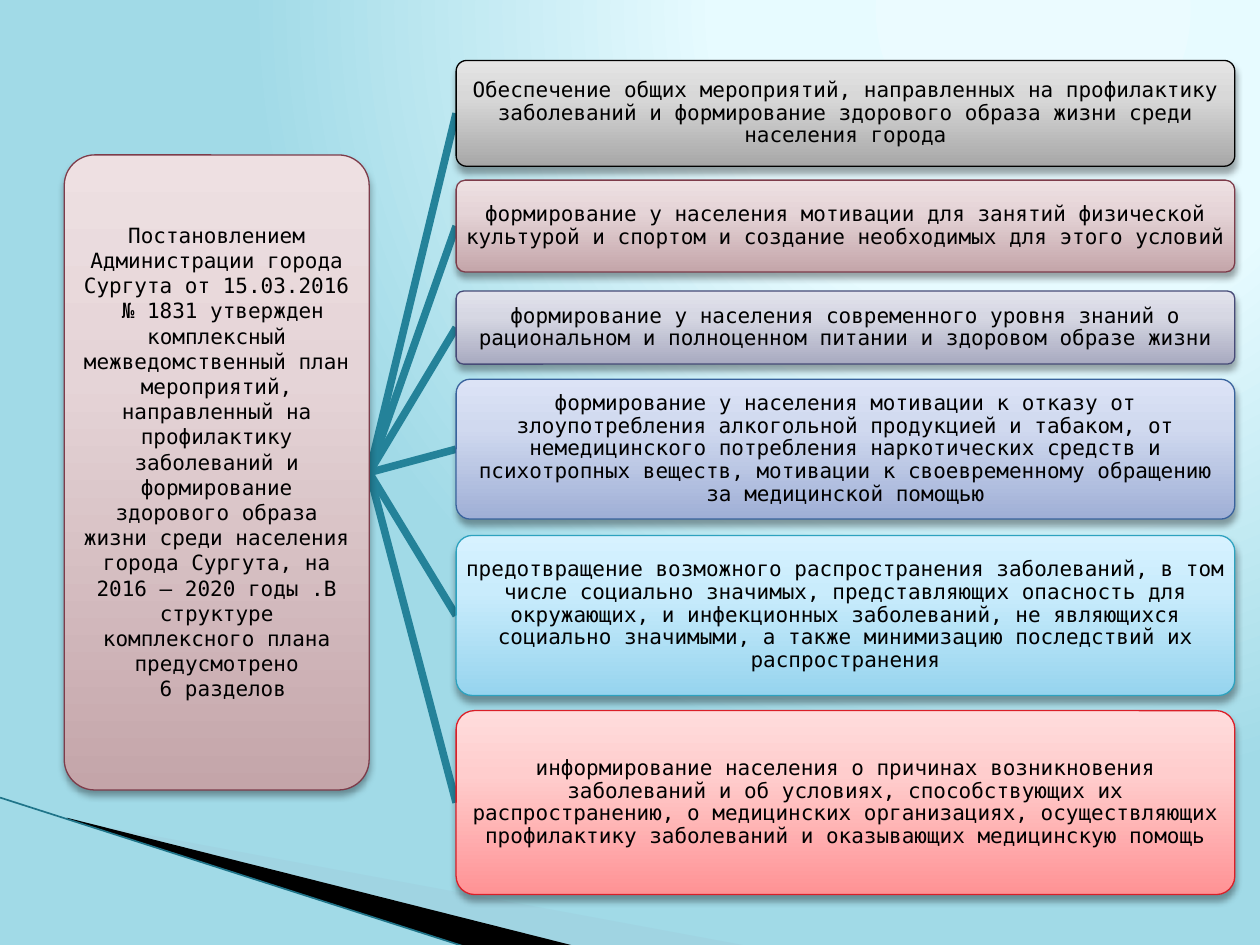
import lxml.etree
import pptx
import pptx.dml.color
import pptx.enum.shapes
import pptx.enum.text
import pptx.oxml
import pptx.oxml.ns
import pptx.util

Inches = pptx.util.Inches
Pt = pptx.util.Pt
RGB = pptx.dml.color.RGBColor
qn = pptx.oxml.ns.qn

FONT = "DejaVu Sans Mono"
BLACK = RGB(0x00, 0x00, 0x00)
TEAL = RGB(0x24, 0x82, 0x99)
DARK_TEAL = RGB(0x1F, 0x74, 0x89)
PALE_BLUE = RGB(0xA0, 0xCB, 0xDC)
BACKGROUND = [RGB(0xEB, 0xFB, 0xFF), RGB(0xE7, 0xFB, 0xFF), RGB(0xA1, 0xDA, 0xE7)]
GREY = [RGB(0xA7, 0xA7, 0xA7), RGB(0xD8, 0xD8, 0xD8), RGB(0xE4, 0xE4, 0xE4)]
ROSE = [RGB(0xC4, 0xA5, 0xA9), RGB(0xE5, 0xD4, 0xD7), RGB(0xEE, 0xE0, 0xE2)]
VIOLET = [RGB(0xA8, 0xAA, 0xC0), RGB(0xD6, 0xD7, 0xE3), RGB(0xE2, 0xE2, 0xEC)]
BLUE = [RGB(0x9F, 0xAF, 0xD6), RGB(0xD0, 0xD9, 0xEF), RGB(0xDC, 0xE3, 0xF6)]
SKY = [RGB(0x96, 0xD4, 0xEE), RGB(0xC9, 0xEC, 0xFC), RGB(0xD7, 0xF2, 0xFF)]
RED = [RGB(0xFF, 0x92, 0x94), RGB(0xFF, 0xCD, 0xCD), RGB(0xFF, 0xDC, 0xDC)]
ROSE_LINE = RGB(0x7D, 0x3C, 0x4A)
VIOLET_LINE = RGB(0x47, 0x4B, 0x78)
BLUE_LINE = RGB(0x39, 0x63, 0x9D)
SKY_LINE = RGB(0x2D, 0xA2, 0xBF)
RED_LINE = RGB(0xDA, 0x1F, 0x28)


def set_gradient(parent, colors, middle, direction):
    stops = "".join(
        f'<a:gs pos="{pos * 1000}"><a:srgbClr val="{color}"/></a:gs>'
        for pos, color in zip((0, middle, 100), colors)
    )
    old = parent.find(qn("a:gradFill"))
    parent.replace(old, pptx.oxml.parse_xml(
        f'<a:gradFill {pptx.oxml.ns.nsdecls("a")} rotWithShape="1">'
        f"<a:gsLst>{stops}</a:gsLst>{direction}</a:gradFill>"
    ))


def add_box(s, left, top, width, height, colors, line, texts, spacing):
    sp = s.shapes.add_shape(
        pptx.enum.shapes.MSO_SHAPE.ROUNDED_RECTANGLE,
        Inches(left), Inches(top), Inches(width), Inches(height),
    )
    sp.adjustments[0] = 0.1
    sp.fill.gradient()
    set_gradient(sp.element.spPr, colors, 65, '<a:lin ang="16200000" scaled="0"/>')
    sp.line.color.rgb = line
    sp.line.width = Pt(0.75)
    sp.shadow.inherit = False
    sp.element.spPr.find(qn("a:effectLst")).append(pptx.oxml.parse_xml(
        f'<a:outerShdw {pptx.oxml.ns.nsdecls("a")} blurRad="50800" dist="38100" '
        'dir="5400000" rotWithShape="0"><a:srgbClr val="000000">'
        '<a:alpha val="35000"/></a:srgbClr></a:outerShdw>'
    ))
    tf = sp.text_frame
    tf.word_wrap = True
    tf.vertical_anchor = pptx.enum.text.MSO_ANCHOR.MIDDLE
    tf.margin_left = tf.margin_right = Inches(0.04)
    tf.margin_top = tf.margin_bottom = Inches(0.03)
    for i, text in enumerate(texts):
        p = tf.paragraphs[0] if i == 0 else tf.add_paragraph()
        p.text = text
        p.alignment = pptx.enum.text.PP_ALIGN.CENTER
        p.line_spacing = spacing
        p.font.name = FONT
        p.font.size = Pt(12)
        p.font.color.rgb = BLACK
    return sp


prs = pptx.Presentation()
prs.slide_width = Inches(10)
prs.slide_height = Inches(7.5)
s = prs.slides.add_slide(prs.slide_layouts[6])

s.background.fill.gradient()
set_gradient(
    s.element.find(".//" + qn("p:bgPr")), BACKGROUND, 40,
    '<a:path path="circle"><a:fillToRect l="65000" t="0" r="0" b="98000"/></a:path>',
)

wedges = [
    ([(0.55, 6.51), (5.95, 7.51), (4.56, 7.51), (0.55, 6.5)], PALE_BLUE, 40),
    ([(0.53, 6.49), (4.57, 7.51), (3.72, 7.52), (0.54, 6.5)], BLACK, 100),
]
for points, color, opacity in wedges:
    corners = [(Inches(x), Inches(y)) for x, y in points]
    builder = s.shapes.build_freeform(*corners[0])
    builder.add_line_segments(corners[1:], close=True)
    sp = builder.convert_to_shape()
    sp.fill.solid()
    sp.fill.fore_color.rgb = color
    sp.line.fill.background()
    sp.shadow.inherit = False
    if opacity < 100:
        clr = sp.element.spPr.find(qn("a:solidFill")).find(qn("a:srgbClr"))
        lxml.etree.SubElement(clr, qn("a:alpha")).set("val", str(opacity * 1000))

plan_left, plan_top, plan_width, plan_height = 0.51, 1.23, 2.42, 5.04
box_left, box_width = 3.62, 6.18
sections = [
    (0.48, 0.84, GREY, BLACK, "Обеспечение общих мероприятий, направленных на профилактику заболеваний и формирование здорового образа жизни среди населения города"),
    (1.43, 0.73, ROSE, ROSE_LINE, "формирование у населения мотивации для занятий физической культурой и спортом и создание необходимых для этого условий"),
    (2.31, 0.58, VIOLET, VIOLET_LINE, "формирование у населения современного уровня знаний о рациональном и полноценном питании и здоровом образе жизни"),
    (3.01, 1.11, BLUE, BLUE_LINE, "формирование у населения мотивации к отказу от злоупотребления алкогольной продукцией и табаком, от немедицинского потребления наркотических средств и психотропных веществ, мотивации к своевременному обращению за медицинской помощью"),
    (4.25, 1.27, SKY, SKY_LINE, "предотвращение возможного распространения заболеваний, в том числе социально значимых, представляющих опасность для окружающих, и инфекционных заболеваний, не являющихся социально значимыми, а также минимизацию последствий их распространения"),
    (5.64, 1.46, RED, RED_LINE, "информирование населения о причинах возникновения заболеваний и об условиях, способствующих их распространению, о медицинских организациях, осуществляющих профилактику заболеваний и оказывающих медицинскую помощь"),
]

lines = [(0, 6.33, 3.71, 7.52, DARK_TEAL, 0.95)]
for top, height, *_ in sections:
    lines.append((plan_left + plan_width, plan_top + plan_height / 2,
                  box_left, top + height / 2, TEAL, 4.33))
for x1, y1, x2, y2, color, weight in lines:
    line = s.shapes.add_connector(
        pptx.enum.shapes.MSO_CONNECTOR.STRAIGHT,
        Inches(x1), Inches(y1), Inches(x2), Inches(y2),
    )
    line.line.color.rgb = color
    line.line.width = Pt(weight)
    lxml.etree.SubElement(line.element.spPr, qn("a:effectLst"))

plan_texts = [
    "Постановлением Администрации города Сургута от 15.03.2016",
    " № 1831 утвержден комплексный межведомственный план мероприятий, направленный на профилактику заболеваний и формирование здорового образа жизни среди населения города Сургута, на 2016 – 2020 годы .В структуре комплексного плана предусмотрено",
    " 6 разделов",
]
plan = add_box(s, plan_left, plan_top, plan_width, plan_height,
               ROSE, ROSE_LINE, plan_texts, 1.0)
plan.text_frame.margin_bottom = Inches(0.2)

for top, height, colors, line, text in sections:
    add_box(s, box_left, top, box_width, height, colors, line, [text], 0.9)

prs.save("out.pptx")
